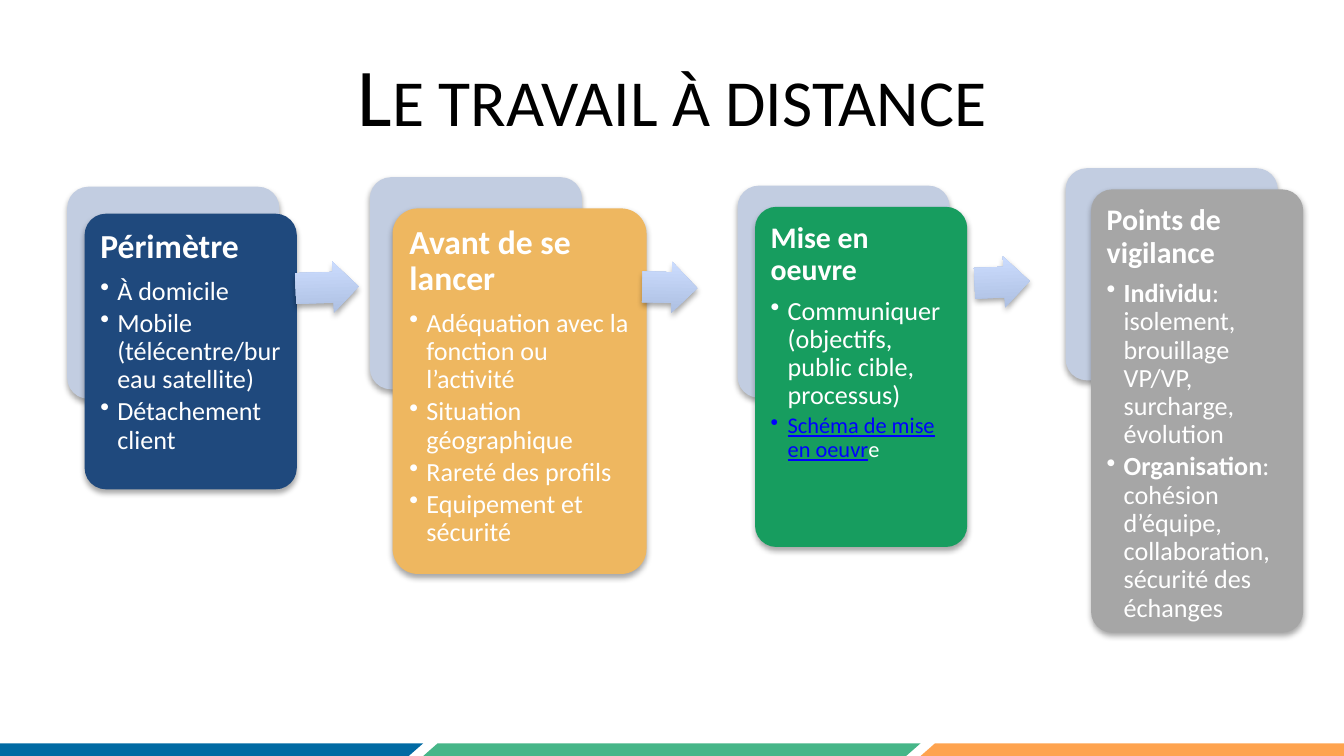
"""Builds the slide on remote work with its four linked cards."""
from dataclasses import dataclass

from lxml import etree
from pptx import Presentation
from pptx import util as u
from pptx.dml import color as dml
from pptx.enum import shapes, text
from pptx.oxml import ns

HUES = {
    "blue": "016AA3", "green": "46B688", "orange": "FEA34F",
    "pale": "C2CDE1", "navy": "1F497D", "gold": "EEB760",
    "leaf": "179D5F", "grey": "A6A6A6", "dusk": "ADBFE1", "sky": "CCDDFF",
    "white": "FFFFFF", "black": "000000", "link": "0000FF",
}
KINDS = shapes.MSO_SHAPE
SIDE = 4.01
INSET = u.Cm(0.18)


@dataclass
class Box:
    left: float
    top: float
    width: float = SIDE
    height: float = SIDE


@dataclass
class Run:
    words: str
    size: int = 14
    bold: bool = False
    line: bool = False
    hue: str = "white"


@dataclass
class Card:
    back: Box
    front: Box
    hue: str
    head: Run
    items: list[list[Run]]


@dataclass
class Arrow:
    box: Box
    turn: float


CARDS = [
    Card(Box(1.27, 3.53), Box(1.6, 4.04, height=5.21), "navy", Run("Périmètre", 18, True), [
        [Run("À domicile")],
        [Run("Mobile (télécentre/bureau satellite)")],
        [Run("Détachement client")],
    ]),
    Card(Box(6.99, 3.35), Box(7.42, 3.94, 4.8, 6.91), "gold", Run("Avant de se lancer", 18, True), [
        [Run("Adéquation avec la fonction ou l’activité")],
        [Run("Situation géographique")],
        [Run("Rareté des profils")],
        [Run("Equipement et sécurité")],
    ]),
    Card(Box(13.94, 3.51), Box(14.27, 3.91, height=6.43), "leaf", Run("Mise en oeuvre", 16, True), [
        [Run("Communiquer (objectifs, public cible, processus)")],
        [Run("Schéma de mise en oeuvr", 12, line=True, hue="link"), Run("e", 12)],
    ]),
    Card(Box(20.14, 3.18), Box(20.62, 3.58, height=8.38), "grey", Run("Points de vigilance", 16, True), [
        [Run("Individu", bold=True), Run(": isolement, brouillage VP/VP, surcharge, évolution")],
        [Run("Organisation", bold=True), Run(": cohésion d’équipe, collaboration, sécurité des échanges")],
    ]),
]
ARROWS = [
    Arrow(Box(5.59, 4.95, 1.19, 0.97), -1.9),
    Arrow(Box(12.14, 4.95, 1.04, 0.97), 1.3),
    Arrow(Box(18.42, 4.85, 1.04, 0.97), -2.5),
]


def tint(name: str) -> dml.RGBColor:
    """Return the named colour."""
    return dml.RGBColor.from_string(HUES[name])


def node(base, tag: str, **keys: str):
    """Append an XML element to its parent."""
    return etree.SubElement(base, ns.qn(tag), keys)


def place(box: Box) -> list[u.Cm]:
    """Return a box as lengths."""
    return [u.Cm(n) for n in (box.left, box.top, box.width, box.height)]


def shade(shape) -> None:
    """Give a shape its soft lower shadow."""
    list_ = shape._element.spPr.find(ns.qn("a:effectLst"))
    cast = node(list_, "a:outerShdw", blurRad="40000", dist="23000", dir="5400000", rotWithShape="0")
    node(node(cast, "a:srgbClr", val=HUES["black"]), "a:alpha", val="35000")


def draw(slide, kind, box: Box, hue: str, *bends: float):
    """Draw a flat preset shape without outline."""
    shape = slide.shapes.add_shape(kind, *place(box))
    for spot, bend in enumerate(bends):
        shape.adjustments[spot] = bend
    shape.fill.solid()
    shape.fill.fore_color.rgb = tint(hue)
    shape.line.fill.background()
    shape.shadow.inherit = False
    return shape


def write(para, runs: list[Run]) -> None:
    """Write formatted runs into a paragraph."""
    for part in runs:
        run = para.add_run()
        run.text = part.words
        look = {"name": "Calibri", "size": u.Pt(part.size), "bold": part.bold, "underline": part.line}
        for key, value in look.items():
            setattr(run.font, key, value)
        run.font.color.rgb = tint(part.hue)


def space(para, after: int):
    """Set tight lines and a gap in percent, and return the properties."""
    para.alignment = text.PP_ALIGN.LEFT
    para.line_spacing = 0.9
    props = para._p.get_or_add_pPr()
    node(node(props, "a:spcAft"), "a:spcPct", val=str(after * 1000))
    return props


def draw_card(slide, card: Card) -> None:
    """Draw a card with its pale back plate and bullets."""
    shade(draw(slide, KINDS.ROUNDED_RECTANGLE, card.back, "pale", 0.1))
    front = draw(slide, KINDS.ROUNDED_RECTANGLE, card.front, card.hue, 0.1)
    shade(front)
    frame = front.text_frame
    look = {"word_wrap": True, "vertical_anchor": text.MSO_ANCHOR.TOP}
    look |= {f"margin_{edge}": INSET for edge in ("left", "top", "right", "bottom")}
    for key, value in look.items():
        setattr(frame, key, value)
    space(frame.paragraphs[0], 35)
    write(frame.paragraphs[0], [card.head])
    for runs in card.items:
        para = frame.add_paragraph()
        para.level = 1
        props = space(para, 15)
        dent = u.Cm(0.32)
        props.set("marL", str(dent))
        props.set("indent", str(-dent))
        node(props, "a:buChar", char="•")
        write(para, runs)


def draw_arrow(slide, arrow: Arrow) -> None:
    """Draw a shaded arrow between cards."""
    shape = draw(slide, KINDS.RIGHT_ARROW, arrow.box, "dusk", 0.6, 0.5)
    shape.rotation = arrow.turn
    shape.fill.gradient()
    shape.fill.gradient_angle = 90
    for stop, hue in zip(shape.fill.gradient_stops, ("dusk", "sky")):
        stop.color.rgb = tint(hue)
    shade(shape)


def draw_title(slide, words: str) -> None:
    """Write the centred title in small capitals."""
    frame = slide.shapes.add_textbox(*place(Box(1.27, 0.58, 22.86, 2.39))).text_frame
    frame.word_wrap = True
    frame.vertical_anchor = text.MSO_ANCHOR.MIDDLE
    para = frame.paragraphs[0]
    para.alignment = text.PP_ALIGN.CENTER
    write(para, [Run(words, 44, hue="black")])
    para.runs[0]._r.get_or_add_rPr().set("cap", "small")


def main() -> None:
    """Build and save the deck."""
    deck = Presentation()
    deck.slide_width, deck.slide_height = u.Cm(25.4), u.Cm(14.29)
    slide = deck.slides.add_slide(deck.slide_layouts[6])
    for spot, hue in enumerate(("blue", "green", "orange")):
        draw(slide, KINDS.PARALLELOGRAM, Box(-1.4 + 9.4 * spot, 14.05, 9.4, 0.24), hue, 1.14)
    for card in CARDS:
        draw_card(slide, card)
    for arrow in ARROWS:
        draw_arrow(slide, arrow)
    draw_title(slide, "Le travail à distance")
    deck.save("out.pptx")


if __name__ == "__main__":
    main()
